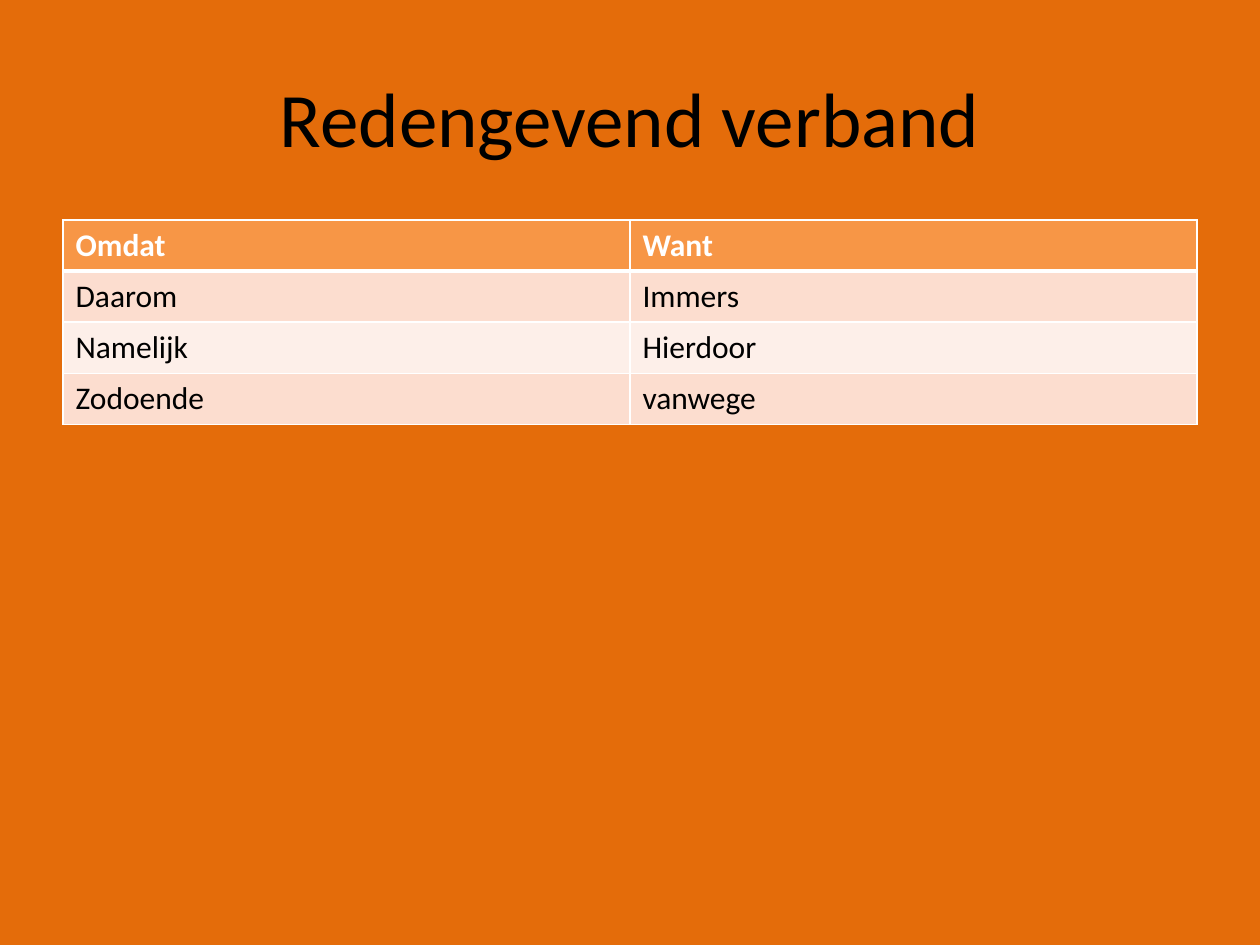
from lxml import etree
from pptx import Presentation
from pptx import util as u
from pptx.dml.color import RGBColor
from pptx.enum import text
from pptx.oxml.ns import qn

PX = u.Inches(1) // 126
COLORS = {
    "background": "E46C0A",
    "header": "F79646",
    "odd": "FCDDCF",
    "even": "FDEFE9",
    "light": "FFFFFF",
    "dark": "000000",
}
SIGNAL_WORDS = [
    ("Omdat", "Want"),
    ("Daarom", "Immers"),
    ("Namelijk", "Hierdoor"),
    ("Zodoende", "vanwege"),
]
COLUMN_WIDTH, ROW_HEIGHT = 567, 51


def style_text(paragraph, size, color, bold=False):
    font = paragraph.runs[0].font
    font.name = "Calibri"
    font.size = u.Pt(size)
    font.bold = bold
    font.color.rgb = RGBColor.from_string(COLORS[color])


def add_border(cell, side, points):
    line = etree.SubElement(cell._tc.get_or_add_tcPr(), qn(f"a:ln{side}"), w=str(u.Pt(points)))
    fill = etree.SubElement(line, qn("a:solidFill"))
    etree.SubElement(fill, qn("a:srgbClr"), val=COLORS["light"])


deck = Presentation()
deck.slide_width, deck.slide_height = 1260 * PX, 945 * PX
slide = deck.slides.add_slide(deck.slide_layouts[5])
slide.background.fill.solid()
slide.background.fill.fore_color.rgb = RGBColor.from_string(COLORS["background"])

heading = slide.shapes.title
heading.left, heading.top, heading.width, heading.height = 63 * PX, 38 * PX, 1134 * PX, 157 * PX
heading.text_frame.text = "Redengevend verband"
heading.text_frame.vertical_anchor = text.MSO_ANCHOR.MIDDLE
heading.text_frame.paragraphs[0].alignment = text.PP_ALIGN.CENTER
style_text(heading.text_frame.paragraphs[0], 44, "dark")

word_table = slide.shapes.add_table(
    len(SIGNAL_WORDS), 2, 63 * PX, 220 * PX,
    2 * COLUMN_WIDTH * PX, len(SIGNAL_WORDS) * ROW_HEIGHT * PX,
).table
for column in word_table.columns:
    column.width = COLUMN_WIDTH * PX

for index, words in enumerate(SIGNAL_WORDS):
    word_table.rows[index].height = ROW_HEIGHT * PX
    is_header = index == 0
    band = "header" if is_header else "odd" if index % 2 else "even"
    for cell, word in zip(word_table.rows[index].cells, words):
        cell.text_frame.text = word
        style_text(cell.text_frame.paragraphs[0], 18, "light" if is_header else "dark", is_header)
        for side in "LRTB":
            under_header = (index, side) in [(0, "B"), (1, "T")]
            add_border(cell, side, 3 if under_header else 1)
        cell.fill.solid()
        cell.fill.fore_color.rgb = RGBColor.from_string(COLORS[band])

deck.save("out.pptx")
